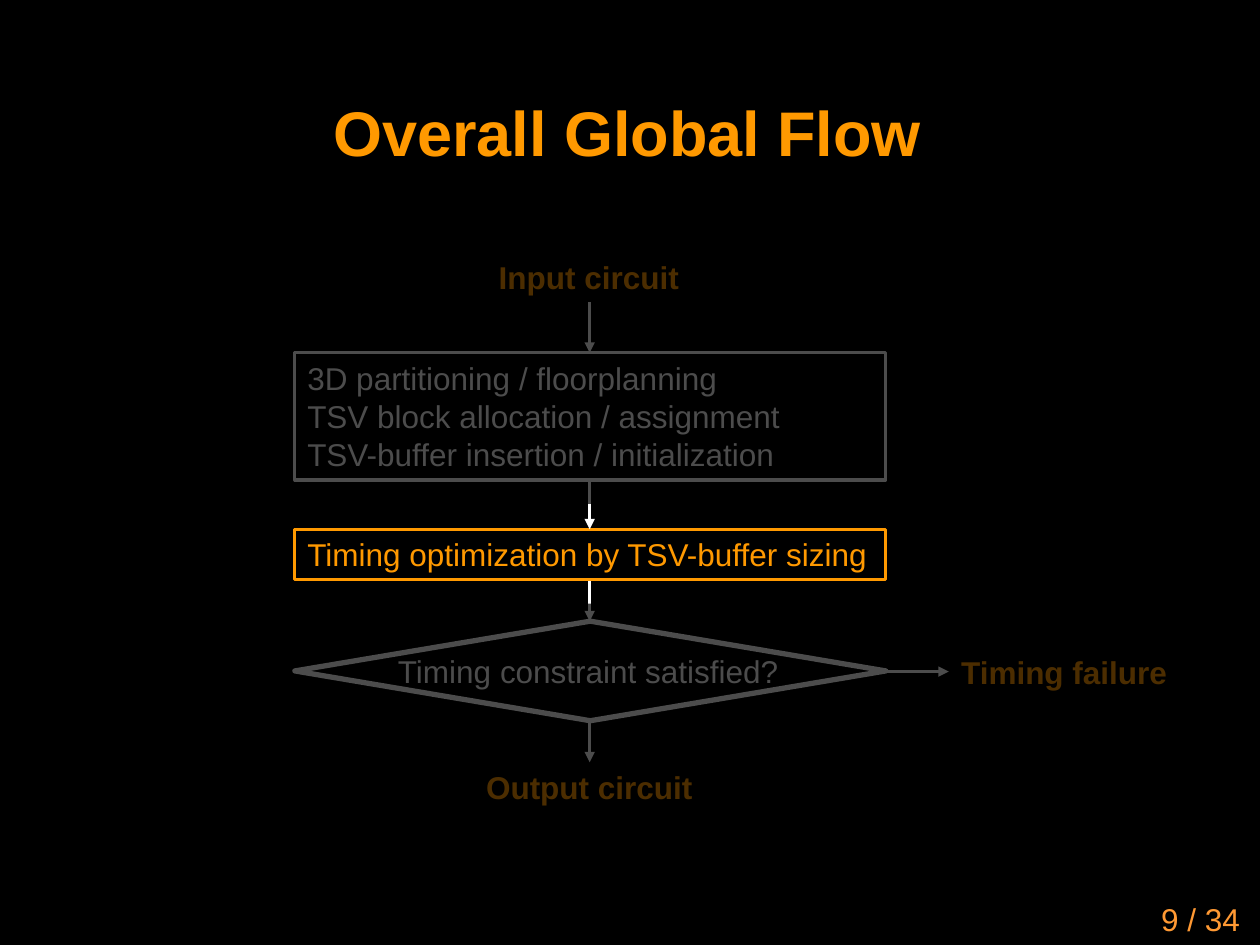
from lxml.etree import SubElement
from pptx import Presentation
from pptx.dml.color import RGBColor
from pptx.enum.shapes import MSO_CONNECTOR, MSO_SHAPE
from pptx.enum.text import MSO_ANCHOR, PP_ALIGN
from pptx.oxml.ns import qn
from pptx.util import Inches, Pt

COLORS = {"back": "000000", "accent": "FF9900", "plain": "FFFFFF", "number": "FF9933"}
FLOW_LEFT, FLOW_WIDTH, AXIS = 2.34, 4.69, 4.68


def color(name):
    """Return the named colour."""
    return RGBColor.from_string(COLORS[name])


def write(shape, lines, tint, size=18, bold=False, align=PP_ALIGN.LEFT,
          anchor=MSO_ANCHOR.TOP, wrap=False):
    """Write one paragraph per line into a shape."""
    frame = shape.text_frame
    frame.word_wrap = wrap
    frame.vertical_anchor = anchor
    for index, line in enumerate(lines):
        para = frame.paragraphs[0] if index == 0 else frame.add_paragraph()
        para.alignment = align
        span = para.add_run()
        span.text = line
        span.font.name = "Arial"
        span.font.size = Pt(size)
        span.font.bold = bold
        span.font.color.rgb = color(tint)


def add_label(page, box, text, tint="accent", **style):
    """Add a line of text in a box."""
    label = page.shapes.add_textbox(*map(Inches, box))
    write(label, [text], tint, **style)


def add_outline(page, kind, box, tint, weight):
    """Add an unfilled shape with a coloured outline."""
    shape = page.shapes.add_shape(kind, *map(Inches, box))
    shape.shadow.inherit = False
    shape.fill.background()
    shape.line.color.rgb = color(tint)
    shape.line.width = Pt(weight)
    return shape


def add_step(page, box, lines, tint):
    """Add a process step of the flow."""
    step = add_outline(page, MSO_SHAPE.RECTANGLE, box, tint, 1.75)
    write(step, lines, tint)


def add_decision(page, box, question):
    """Add the decision diamond with its question."""
    left, top, width, height = box
    add_outline(page, MSO_SHAPE.DIAMOND, box, "plain", 3)
    add_label(page, (left + 0.72, top + height / 2 - 0.2, 3.25, 0.4), question, "plain")


def add_arrow(page, start, end):
    """Add an arrow between two points."""
    arrow = page.shapes.add_connector(MSO_CONNECTOR.STRAIGHT, *map(Inches, start + end))
    arrow.line.color.rgb = color("plain")
    arrow.line.width = Pt(1.75)
    SubElement(arrow.line._get_or_add_ln(), qn("a:tailEnd"), type="triangle")
    SubElement(arrow._element.spPr, qn("a:effectLst"))


def add_veil(page, box):
    """Dim a region with a translucent rectangle."""
    veil = page.shapes.add_shape(MSO_SHAPE.RECTANGLE, *map(Inches, box))
    veil.shadow.inherit = False
    veil.line.fill.background()
    veil.fill.solid()
    veil.fill.fore_color.rgb = color("back")
    tone = veil._element.spPr.find(qn("a:solidFill"))[0]
    SubElement(tone, qn("a:alpha"), val="70000")


def add_flow(page, left, width):
    """Add the steps, decision, ends and arrows of the flow chart."""
    right = left + width
    add_label(page, (3.86, 2, 1.65, 0.4), "Input circuit", bold=True)
    add_step(page, (left, 2.8, width, 1.01), [
        "3D partitioning / floorplanning",
        "TSV block allocation / assignment",
        "TSV-buffer insertion / initialization",
    ], "plain")
    add_step(page, (left, 4.2, width, 0.4),
             ["Timing optimization by TSV-buffer sizing"], "accent")
    add_decision(page, (left, 4.93, width, 0.79), "Timing constraint satisfied?")
    add_label(page, (3.76, 6.05, 1.86, 0.4), "Output circuit", bold=True)
    add_label(page, (right + 0.5, 5.13, 1.85, 0.4), "Timing failure", bold=True)
    for top, bottom in [(2.4, 2.8), (3.81, 4.2), (4.61, 4.93), (5.72, 6.05)]:
        add_arrow(page, (AXIS, top), (AXIS, bottom))
    add_arrow(page, (right, 5.33), (right + 0.5, 5.33))


def main():
    """Build the slide and save it."""
    deck = Presentation()
    deck.slide_width, deck.slide_height = Inches(10), Inches(7.5)
    page = deck.slides.add_slide(deck.slide_layouts[6])
    page.background.fill.solid()
    page.background.fill.fore_color.rgb = color("back")
    add_label(page, (0.73, 0.58, 8.5, 0.93), "Overall Global Flow", size=36, bold=True,
              align=PP_ALIGN.CENTER, anchor=MSO_ANCHOR.MIDDLE, wrap=True)
    add_flow(page, FLOW_LEFT, FLOW_WIDTH)
    add_label(page, (7.86, 7.09, 2.08, 0.5), "9 / 34", "number",
              align=PP_ALIGN.RIGHT, wrap=True)
    add_veil(page, (0.56, 1.76, 8.07, 2.24))
    add_veil(page, (0.58, 4.79, 8.86, 1.82))
    deck.save("out.pptx")


if __name__ == "__main__":
    main()
